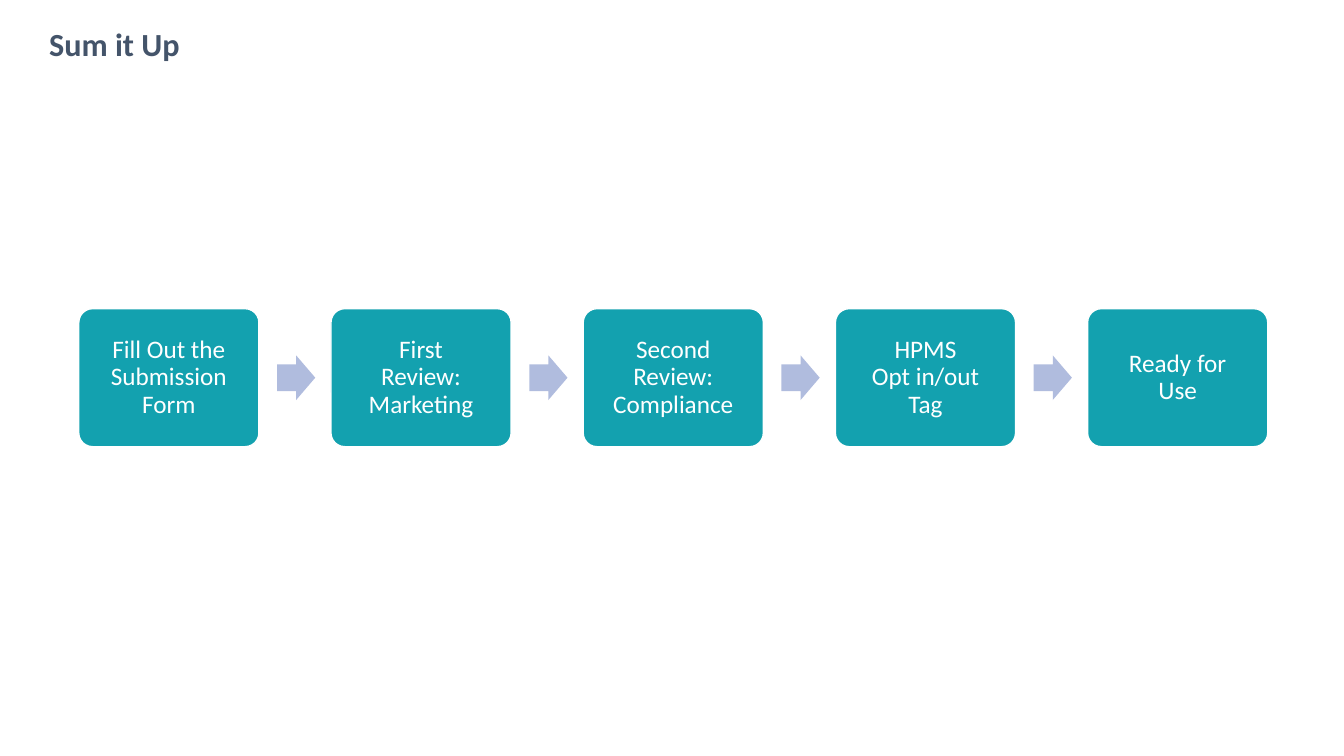
from pptx import Presentation
from pptx.dml.color import RGBColor
from pptx.enum.shapes import MSO_SHAPE
from pptx.enum.text import MSO_ANCHOR, PP_ALIGN
from pptx.util import Pt

ROUNDED = MSO_SHAPE.ROUNDED_RECTANGLE
ARROW = MSO_SHAPE.RIGHT_ARROW
MIDDLE = MSO_ANCHOR.MIDDLE
CENTER = PP_ALIGN.CENTER

COLORS = {"title": "44546A", "step": "13A1AF", "arrow": "B0BCDE", "white": "FFFFFF"}
FONT = "Calibri"

# Each step: lines of text and inner margin in points
STEPS = [
    (["Fill Out the Submission Form"], 5),
    (["First Review: Marketing"], 16.5),
    (["Second Review: Compliance"], 16.5),
    (["HPMS", "Opt in/out Tag"], 16.5),
    (["Ready for Use"], 16.5),
]
STEP_LEFT, STEP_PITCH = 56.3, 180.15
STEP_WIDTH, STEP_HEIGHT = 128.7, 98.6
ARROW_OFFSET, ARROW_WIDTH, ARROW_HEIGHT = 141.6, 27.3, 31.9
FLOW_MIDDLE = 269.8


def color(name):
    return RGBColor.from_string(COLORS[name])


def add_run(paragraph, text, size, color_name, bold=False):
    run = paragraph.add_run()
    run.text = text
    run.font.name = FONT
    run.font.size = Pt(size)
    run.font.bold = bold
    run.font.color.rgb = color(color_name)


def add_title(slide, text):
    box = slide.shapes.add_textbox(Pt(28), Pt(17.3), Pt(794), Pt(64.8))
    box.text_frame.word_wrap = True
    paragraph = box.text_frame.paragraphs[0]
    paragraph.line_spacing = 0.9
    add_run(paragraph, text, 23, "title", bold=True)


def add_flow_shape(slide, kind, left, width, height, fill, adjustments):
    """Add a filled shape centred vertically on the flow."""
    shape = slide.shapes.add_shape(
        kind, Pt(left), Pt(FLOW_MIDDLE - height / 2), Pt(width), Pt(height))
    for index, value in enumerate(adjustments):
        shape.adjustments[index] = value
    shape.shadow.inherit = False
    shape.fill.solid()
    shape.fill.fore_color.rgb = color(fill)
    shape.line.fill.background()
    return shape


def add_step(slide, left, lines, margin):
    shape = add_flow_shape(slide, ROUNDED, left, STEP_WIDTH, STEP_HEIGHT, "step", [0.1])
    shape.line.color.rgb = color("white")
    shape.line.width = Pt(1)
    frame = shape.text_frame
    frame.word_wrap = True
    frame.vertical_anchor = MIDDLE
    frame.margin_left = frame.margin_right = Pt(margin)
    frame.margin_top = frame.margin_bottom = Pt(margin)
    paragraph = frame.paragraphs[0]
    paragraph.alignment = CENTER
    paragraph.line_spacing = 0.9
    for index, line in enumerate(lines):
        if index:
            paragraph.add_line_break()
        add_run(paragraph, line, 18, "white")


def add_arrow(slide, left):
    add_flow_shape(slide, ARROW, left, ARROW_WIDTH, ARROW_HEIGHT, "arrow", [0.6, 0.5])


def main():
    presentation = Presentation()
    presentation.slide_width = Pt(960)
    presentation.slide_height = Pt(540)
    slide = presentation.slides.add_slide(presentation.slide_layouts[6])
    add_title(slide, "Sum it Up")
    for index, (lines, margin) in enumerate(STEPS):
        left = STEP_LEFT + index * STEP_PITCH
        add_step(slide, left, lines, margin)
        if index < len(STEPS) - 1:
            add_arrow(slide, left + ARROW_OFFSET)
    presentation.save("out.pptx")


if __name__ == "__main__":
    main()
